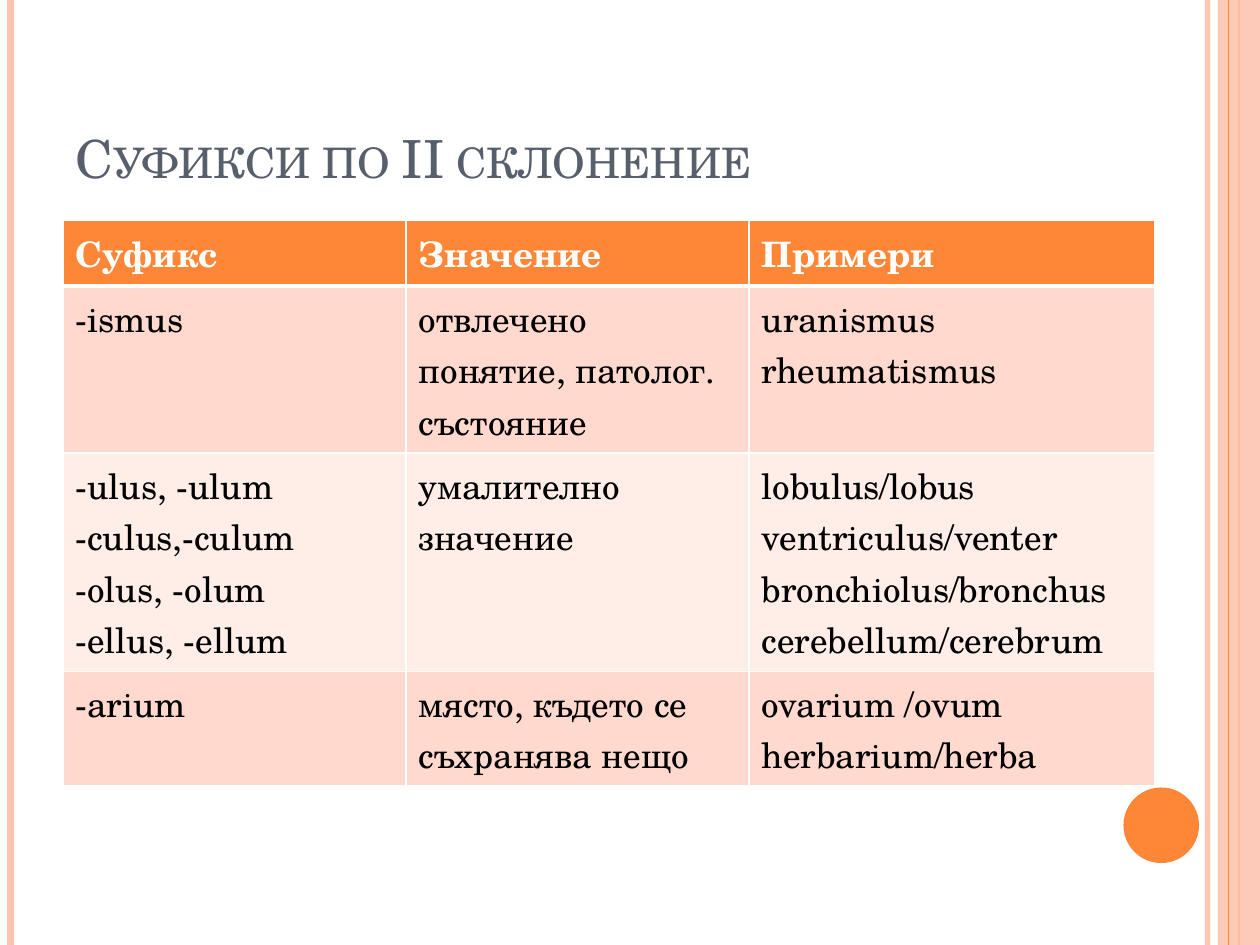
from lxml.etree import SubElement
from pptx import Presentation
from pptx.dml.color import RGBColor
from pptx.enum.shapes import MSO_CONNECTOR, MSO_SHAPE
from pptx.enum.text import MSO_ANCHOR
from pptx.oxml.ns import qn
from pptx.util import Inches, Pt

COLS, ROWS = 120, 90
FONT = "TeX Gyre Schola"
ORANGE = RGBColor(0xFE, 0x86, 0x37)
PEACH = RGBColor(0xFE, 0xC3, 0xAE)
SLATE = RGBColor(0x57, 0x5F, 0x6D)
BAND_DARK = RGBColor(0xFF, 0xD9, 0xCE)
BAND_LIGHT = RGBColor(0xFF, 0xED, 0xE8)
WHITE = RGBColor(0xFF, 0xFF, 0xFF)
BLACK = RGBColor(0, 0, 0)

TITLE = "Суфикси по II склонение"
COLUMN_SHARES = (32.67, 32.67, 38.66)
ROW_SHARES = (6.25, 15.9, 20.8, 10.9)
TABLE = [
    ["Суфикс", "Значение", "Примери"],
    ["-ismus", "отвлечено понятие, патолог. състояние", "uranismus\nrheumatismus"],
    ["-ulus, -ulum\n-culus,-culum\n-olus, -olum\n-ellus, -ellum", "умалително значение",
     "lobulus/lobus\nventriculus/venter\nbronchiolus/bronchus\ncerebellum/cerebrum"],
    ["-arium", "място, където се съхранява нещо", "ovarium /ovum\nherbarium/herba"],
]


def grid(units):
    return Inches(units * 10 / COLS)


def set_alpha(fill_parent, percent):
    color = fill_parent.find(qn("a:solidFill"))[0]
    SubElement(color, qn("a:alpha"), val=str(percent * 1000))


def add_run(p, text, size, color, bold=False):
    r = p.add_run()
    r.text = text
    r.font.name = FONT
    r.font.size = Pt(size)
    r.font.color.rgb = color
    r.font.bold = bold
    return r


def add_stripe(s, col, color, width, alpha=None):
    line = s.shapes.add_connector(MSO_CONNECTOR.STRAIGHT, grid(col), 0, grid(col), grid(ROWS))
    line.line.color.rgb = color
    line.line.width = Pt(width)
    SubElement(line._element.spPr, qn("a:effectLst"))
    if alpha:
        set_alpha(line._element.spPr.find(qn("a:ln")), alpha)


def add_plain_shape(s, kind, box, color):
    sp = s.shapes.add_shape(kind, *map(grid, box))
    sp.shadow.inherit = False
    sp.fill.solid()
    sp.fill.fore_color.rgb = color
    sp.line.fill.background()
    return sp


def add_frame(s):
    add_stripe(s, 115, PEACH, 3, alpha=93)
    add_stripe(s, 1, PEACH, 4.5)
    add_stripe(s, 118, ORANGE, 1.5)
    band = add_plain_shape(s, MSO_SHAPE.RECTANGLE, (116, 0, 4, ROWS), PEACH)
    set_alpha(band._element.spPr, 87)
    add_stripe(s, 117, ORANGE, 0.75)
    add_plain_shape(s, MSO_SHAPE.OVAL, (107, 75, 7.2, 7.2), ORANGE)


def add_title(s, box):
    tf = s.shapes.add_textbox(*map(grid, box)).text_frame
    tf.word_wrap = True
    tf.vertical_anchor = MSO_ANCHOR.BOTTOM
    r = add_run(tf.paragraphs[0], TITLE, 30, SLATE)
    r.font._element.set("cap", "small")


def set_borders(cell, widths):
    tc_pr = cell._tc.get_or_add_tcPr()
    for side, width in zip("LRTB", widths):
        ln = SubElement(tc_pr, qn(f"a:ln{side}"), w=str(Pt(width)))
        fill = SubElement(ln, qn("a:solidFill"))
        SubElement(fill, qn("a:srgbClr"), val=str(WHITE))


def fill_cell(cell, text, row):
    header = row == 0
    set_borders(cell, (1, 1, 3 if row == 1 else 1, 3 if header else 1))
    cell.fill.solid()
    cell.fill.fore_color.rgb = ORANGE if header else BAND_DARK if row % 2 else BAND_LIGHT
    tf = cell.text_frame
    for i, line in enumerate(text.split("\n")):
        p = tf.add_paragraph() if i else tf.paragraphs[0]
        add_run(p, line, 20, WHITE if header else BLACK, header)


def add_suffix_table(s, box):
    table = s.shapes.add_table(len(TABLE), len(TABLE[0]), *map(grid, box)).table
    for column, share in zip(table.columns, COLUMN_SHARES):
        column.width = grid(share)
    for row, share in zip(table.rows, ROW_SHARES):
        row.height = grid(share)
    for i, texts in enumerate(TABLE):
        for j, text in enumerate(texts):
            fill_cell(table.cell(i, j), text, i)


def main():
    prs = Presentation()
    prs.slide_width, prs.slide_height = grid(COLS), grid(ROWS)
    s = prs.slides.add_slide(prs.slide_layouts[6])
    add_frame(s)
    add_title(s, (6, 3.6, 98, 15))
    add_suffix_table(s, (6, 21, sum(COLUMN_SHARES), sum(ROW_SHARES)))
    prs.save("out.pptx")


if __name__ == "__main__":
    main()
